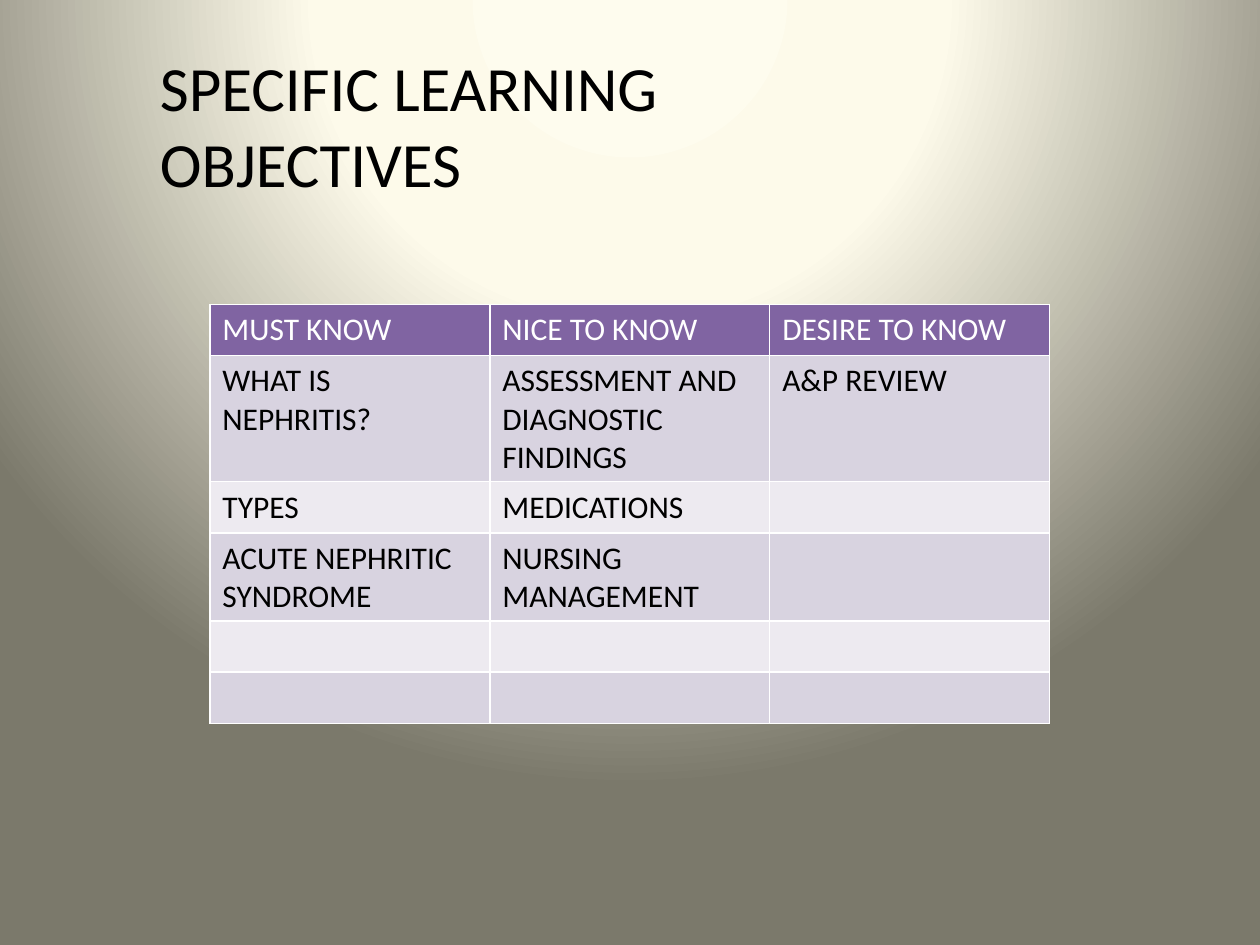
import lxml.etree
import pptx
import pptx.dml.color
import pptx.enum.text
import pptx.oxml
import pptx.util
from pptx.util import Cm


def color(hex_string):
    return pptx.dml.color.RGBColor.from_string(hex_string)


def format_text(paragraph, hex_string, size):
    paragraph.alignment = pptx.enum.text.PP_ALIGN.LEFT
    paragraph.font.color.rgb = color(hex_string)
    values = {"name": "Calibri", "size": pptx.util.Pt(size), "bold": False}
    for name, value in values.items():
        setattr(paragraph.font, name, value)


presentation = pptx.Presentation()
presentation.slide_width = Cm(25.4)
presentation.slide_height = Cm(19.05)
slide = presentation.slides.add_slide(presentation.slide_layouts[5])

# Background: circular gradient centred above the slide
fill = slide.background.fill
fill.gradient()
gradient = slide.background._cSld.bg.bgPr.find(pptx.oxml.ns.qn("a:gradFill"))
for child in list(gradient):
    gradient.remove(child)
stops = lxml.etree.SubElement(gradient, pptx.oxml.ns.qn("a:gsLst"))
for percent, hex_string in [(0, "FEFCEE"), (40, "FDFAEA"), (100, "7B796B")]:
    stop = lxml.etree.SubElement(stops, pptx.oxml.ns.qn("a:gs"), pos=str(percent * 1000))
    lxml.etree.SubElement(stop, pptx.oxml.ns.qn("a:srgbClr"), val=hex_string)
circle = lxml.etree.SubElement(gradient, pptx.oxml.ns.qn("a:path"), {"path": "circle"})
lxml.etree.SubElement(circle, pptx.oxml.ns.qn("a:fillToRect"),
                      l="50000", t="-80000", r="50000", b="180000")

# Title
title = slide.shapes.title
title_box = {"left": Cm(2.97), "top": Cm(0.85), "width": Cm(12.28), "height": Cm(3.33)}
for name, value in title_box.items():
    setattr(title, name, value)
frame_values = {
    "text": "SPECIFIC LEARNING OBJECTIVES",
    "word_wrap": True,
    "auto_size": pptx.enum.text.MSO_AUTO_SIZE.SHAPE_TO_FIT_TEXT,
    "vertical_anchor": pptx.enum.text.MSO_ANCHOR.TOP,
}
for name, value in frame_values.items():
    setattr(title.text_frame, name, value)
format_text(title.text_frame.paragraphs[0], "000000", 36)

# Objectives table: purple header, then alternating bands
objectives = [
    ["MUST KNOW", "NICE TO KNOW", "DESIRE TO KNOW"],
    ["WHAT IS NEPHRITIS?", "ASSESSMENT AND DIAGNOSTIC FINDINGS", "A&P REVIEW"],
    ["TYPES", "MEDICATIONS", ""],
    ["ACUTE NEPHRITIC SYNDROME", "NURSING MANAGEMENT", ""],
    ["", "", ""],
    ["", "", ""],
]
row_height = Cm(1.03)
table = slide.shapes.add_table(len(objectives), 3, Cm(4.23), Cm(6.14), Cm(16.93),
                               row_height * len(objectives)).table
for row_index, texts in enumerate(objectives):
    table.rows[row_index].height = row_height
    band = "8064A2" if row_index == 0 else ("EDEAF0", "D8D3E0")[row_index % 2]
    for column_index, text in enumerate(texts):
        cell = table.cell(row_index, column_index)
        cell.text = text
        cell.fill.solid()
        cell.fill.fore_color.rgb = color(band)
        format_text(cell.text_frame.paragraphs[0],
                    "FFFFFF" if row_index == 0 else "000000", 18)

presentation.save("out.pptx")
